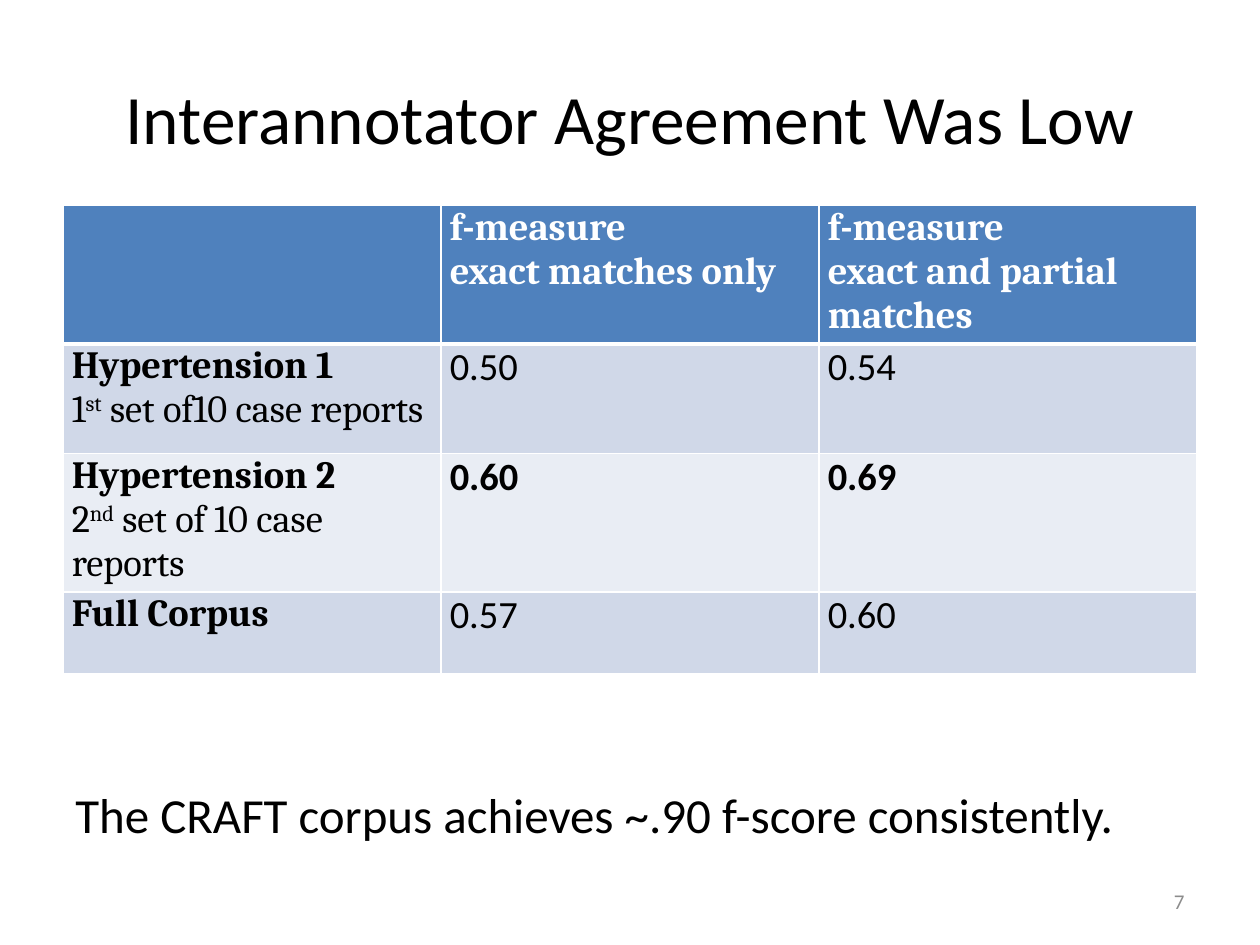
from dataclasses import dataclass

from lxml import etree
from pptx import Presentation
from pptx import util as u
from pptx.dml.color import RGBColor
from pptx.enum import text as t
from pptx.oxml.ns import qn

BLACK = RGBColor(0x00, 0x00, 0x00)
WHITE = RGBColor(0xFF, 0xFF, 0xFF)
GREY = RGBColor(0x8C, 0x8C, 0x8C)
HEADER_BLUE = RGBColor(0x4F, 0x81, 0xBD)
BAND_DARK = RGBColor(0xD0, 0xD8, 0xE8)
BAND_LIGHT = RGBColor(0xE9, 0xED, 0xF4)
BODY_FONT, TABLE_FONT = "Calibri", "Cambria"
TABLE_SIZE = 22


@dataclass
class ResultRow:
    name: str
    detail: tuple[str, ...]  # number, raised ordinal ending, remainder
    scores: tuple[str, str]
    height: float
    fill: RGBColor
    bold: bool = False


HEADERS = (
    (),
    ("f-measure", "exact matches only"),
    ("f-measure", "exact and partial matches"),
)
HEADER_HEIGHT = 0.65
RESULTS = (
    ResultRow("Hypertension 1", ("1", "st", " set of10 case reports"),
              ("0.50", "0.54"), 0.87, BAND_DARK),
    ResultRow("Hypertension 2", ("2", "nd", " set of 10 case reports"),
              ("0.60", "0.69"), 0.87, BAND_LIGHT, bold=True),
    ResultRow("Full Corpus", (), ("0.57", "0.60"), 0.65, BAND_DARK),
)


def add_text(paragraph, content: str, *, size: float = TABLE_SIZE, font: str = BODY_FONT,
             color: RGBColor = BLACK, bold: bool = False, raised: bool = False,
             align=t.PP_ALIGN.LEFT) -> None:
    paragraph.alignment = align
    run = paragraph.add_run()
    run.text = content
    run.font.size = u.Pt(size)
    run.font.name = font
    run.font.bold = bold
    run.font.color.rgb = color
    if raised:
        run.font._element.set("baseline", "30000")


def add_text_box(slide, left: float, top: float, width: float, height: float,
                 content: str, *, anchor=t.MSO_ANCHOR.TOP, **text_format) -> None:
    box = slide.shapes.add_textbox(u.Inches(left), u.Inches(top),
                                   u.Inches(width), u.Inches(height))
    frame = box.text_frame
    frame.word_wrap = True
    frame.vertical_anchor = anchor
    add_text(frame.paragraphs[0], content, **text_format)


def style_cell(cell, fill: RGBColor, bottom_width: float = 1, top_width: float = 1) -> None:
    """Set margins, white borders and fill; borders precede the fill in the XML."""
    cell.margin_left = cell.margin_right = u.Inches(0.07)
    cell.margin_top = cell.margin_bottom = 0
    properties = cell._tc.get_or_add_tcPr()
    widths = {"a:lnL": 1, "a:lnR": 1, "a:lnT": top_width, "a:lnB": bottom_width}
    for tag, width in widths.items():
        line = etree.SubElement(properties, qn(tag), w=str(u.Pt(width)))
        solid = etree.SubElement(line, qn("a:solidFill"))
        etree.SubElement(solid, qn("a:srgbClr"), val=str(WHITE))
    cell.fill.solid()
    cell.fill.fore_color.rgb = fill


def add_results_table(slide) -> None:
    frame = slide.shapes.add_table(len(RESULTS) + 1, len(HEADERS), u.Inches(0.5),
                                   u.Inches(1.63), u.Inches(9), u.Inches(3.04))
    table = frame.table

    # Header row
    table.rows[0].height = u.Inches(HEADER_HEIGHT)
    for cell, lines in zip(table.rows[0].cells, HEADERS):
        style_cell(cell, HEADER_BLUE, bottom_width=3)
        for index, content in enumerate(lines):
            text_frame = cell.text_frame
            paragraph = text_frame.add_paragraph() if index else text_frame.paragraphs[0]
            add_text(paragraph, content, font=TABLE_FONT, color=WHITE, bold=True)

    # Result rows
    for index, result in enumerate(RESULTS, start=1):
        row = table.rows[index]
        row.height = u.Inches(result.height)
        for cell in row.cells:
            style_cell(cell, result.fill, top_width=3 if index == 1 else 1)
        label, *score_cells = row.cells
        add_text(label.text_frame.paragraphs[0], result.name, font=TABLE_FONT, bold=True)
        if result.detail:
            paragraph = label.text_frame.add_paragraph()
            for position, content in enumerate(result.detail):
                add_text(paragraph, content, font=TABLE_FONT, raised=position == 1)
        for cell, score in zip(score_cells, result.scores):
            add_text(cell.text_frame.paragraphs[0], score, bold=result.bold)


def main() -> None:
    presentation = Presentation()
    presentation.slide_width, presentation.slide_height = u.Inches(10), u.Inches(7.5)
    slide = presentation.slides.add_slide(presentation.slide_layouts[6])

    # Title
    add_text_box(slide, 0.5, 0.3, 9, 1.25, "Interannotator Agreement Was Low",
                 size=39.6, align=t.PP_ALIGN.CENTER, anchor=t.MSO_ANCHOR.MIDDLE)

    add_results_table(slide)

    # Comparison and slide number
    add_text_box(slide, 0.5, 6.18, 9, 0.57,
                 "The CRAFT corpus achieves ~.90 f-score consistently.", size=28)
    add_text_box(slide, 7.17, 6.95, 2.33, 0.4, "7", size=12, color=GREY,
                 align=t.PP_ALIGN.RIGHT, anchor=t.MSO_ANCHOR.MIDDLE)

    presentation.save("out.pptx")


if __name__ == "__main__":
    main()
